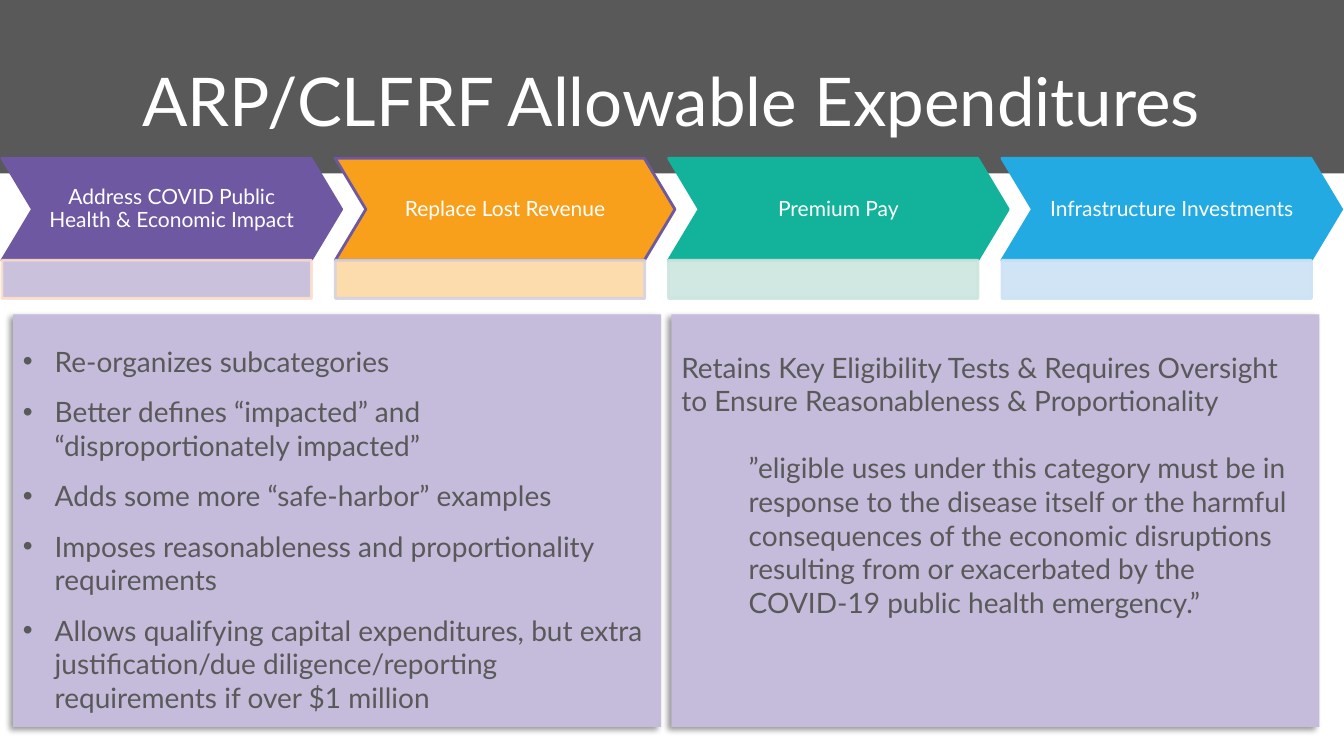
from dataclasses import dataclass

import pptx
import pptx.dml.color
import pptx.enum.shapes
import pptx.enum.text
import pptx.oxml
import pptx.oxml.ns
import pptx.util
from pptx.dml.color import RGBColor
from pptx.util import Cm, Pt

FONT = "Lato"
WHITE = RGBColor(0xFF, 0xFF, 0xFF)
GREY = RGBColor(0x59, 0x59, 0x59)
PURPLE = RGBColor(0x6E, 0x58, 0xA1)
LILAC = RGBColor(0xC5, 0xBB, 0xDA)
PEACH = RGBColor(0xFC, 0xDF, 0xCD)
ORANGE = RGBColor(0xF8, 0xA0, 0x1B)
PALE_ORANGE = RGBColor(0xFC, 0xD9, 0xA4)
PALE_PURPLE = RGBColor(0xD5, 0xD1, 0xE0)
TEAL = RGBColor(0x13, 0xB3, 0x9B)
PALE_TEAL = RGBColor(0xCC, 0xE5, 0xDE)
BLUE = RGBColor(0x23, 0xAA, 0xE2)
PALE_BLUE = RGBColor(0xCD, 0xE2, 0xF4)

RECTANGLE = pptx.enum.shapes.MSO_SHAPE.RECTANGLE
CHEVRON = pptx.enum.shapes.MSO_SHAPE.CHEVRON
MIDDLE = pptx.enum.text.MSO_ANCHOR.MIDDLE
TOP = pptx.enum.text.MSO_ANCHOR.TOP
CENTER = pptx.enum.text.PP_ALIGN.CENTER
LEFT = pptx.enum.text.PP_ALIGN.LEFT
DRAWING_NS = pptx.oxml.ns.nsdecls("a")


@dataclass
class Category:
    label: str
    fill: RGBColor
    edge: RGBColor
    bar_fill: RGBColor
    bar_edge: RGBColor


@dataclass
class PanelText:
    text: str
    indent: float = 0
    space_before: float = 0
    bullet: bool = False


@dataclass
class Panel:
    left: float
    top_inset: float
    texts: list[PanelText]


CATEGORIES = [
    Category("Address COVID Public Health & Economic Impact", PURPLE, PURPLE, LILAC, PEACH),
    Category("Replace Lost Revenue", ORANGE, PURPLE, PALE_ORANGE, PALE_PURPLE),
    Category("Premium Pay", TEAL, TEAL, PALE_TEAL, PALE_TEAL),
    Category("Infrastructure Investments", BLUE, BLUE, PALE_BLUE, PALE_BLUE),
]

CHANGES = [
    "Re-organizes subcategories",
    "Better defines “impacted” and “disproportionately impacted”",
    "Adds some more “safe-harbor” examples",
    "Imposes reasonableness and proportionality requirements",
    "Allows qualifying capital expenditures, but extra justification/due diligence/reporting "
    "requirements if over $1 million",
]

PANELS = [
    Panel(0.33, 0.76, [PanelText(change, 0.8, 12 if number else 0, True)
                       for number, change in enumerate(CHANGES)]),
    Panel(16.92, 0.9, [
        PanelText("Retains Key Eligibility Tests & Requires Oversight to Ensure "
                  "Reasonableness & Proportionality"),
        PanelText("”eligible uses under this category must be in response to the disease itself "
                  "or the harmful consequences of the economic disruptions resulting from or "
                  "exacerbated by the COVID-19 public health emergency.”", 1.7, 24),
    ]),
]


def add_block(slide, kind, left: float, top: float, width: float, height: float,
              fill: RGBColor, edge: RGBColor | None = None):
    block = slide.shapes.add_shape(kind, Cm(left), Cm(top), Cm(width), Cm(height))
    block.shadow.inherit = False
    block.fill.solid()
    block.fill.fore_color.rgb = fill
    if edge is None:
        block.line.fill.background()
    else:
        block.line.color.rgb = edge
        block.line.width = Pt(2)
    return block


def set_frame(frame, anchor, horizontal: float, vertical: float) -> None:
    frame.word_wrap = True
    frame.vertical_anchor = anchor
    frame.margin_left = frame.margin_right = Cm(horizontal)
    frame.margin_top = frame.margin_bottom = Cm(vertical)


def add_text(paragraph, text: str, size: float, color: RGBColor, align) -> None:
    paragraph.alignment = align
    run = paragraph.add_run()
    run.text = text
    run.font.name = FONT
    run.font.size = Pt(size)
    run.font.color.rgb = color


def add_category(slide, category: Category, left: float) -> None:
    arrow = add_block(slide, CHEVRON, left, 3.99, 8.56, 2.57, category.fill, category.edge)
    arrow.adjustments[0] = 0.3
    set_frame(arrow.text_frame, MIDDLE, 0.33, 0.33)
    label = arrow.text_frame.paragraphs[0]
    label.line_spacing = 0.9
    add_text(label, category.label, 15, WHITE, CENTER)

    bar = add_block(slide, RECTANGLE, left, 6.56, 7.8, 0.96, category.bar_fill, category.bar_edge)
    for color in bar._element.spPr.iter(pptx.oxml.ns.qn("a:srgbClr")):
        color.append(pptx.oxml.parse_xml(f'<a:alpha {DRAWING_NS} val="90000"/>'))


def add_panel(slide, panel: Panel) -> None:
    box = add_block(slide, RECTANGLE, panel.left, 7.92, 16.33, 10.4, LILAC)
    effects = box._element.spPr.find(pptx.oxml.ns.qn("a:effectLst"))
    effects.append(pptx.oxml.parse_xml(
        f'<a:outerShdw {DRAWING_NS} blurRad="50800" dist="38100" dir="8100000" algn="tr" '
        'rotWithShape="0"><a:srgbClr val="000000"><a:alpha val="40000"/></a:srgbClr>'
        '</a:outerShdw>'))
    frame = box.text_frame
    set_frame(frame, TOP, 0.25, 0.13)
    frame.margin_top = Cm(panel.top_inset)
    for number, item in enumerate(panel.texts):
        paragraph = frame.add_paragraph() if number else frame.paragraphs[0]
        add_text(paragraph, item.text, 20, GREY, LEFT)
        paragraph.space_before = Pt(item.space_before)
        properties = paragraph._p.get_or_add_pPr()
        properties.set("marL", str(Cm(item.indent)))
        if item.bullet:
            properties.set("indent", str(-Cm(item.indent)))
            properties.append(pptx.oxml.parse_xml(
                f'<a:buFont {DRAWING_NS} typeface="Arial"/>'))
            properties.append(pptx.oxml.parse_xml(f'<a:buChar {DRAWING_NS} char="•"/>'))


def main() -> None:
    deck = pptx.Presentation()
    deck.slide_width, deck.slide_height = Cm(33.87), Cm(19.05)
    slide = deck.slides.add_slide(deck.slide_layouts[6])

    # Header band and title
    add_block(slide, RECTANGLE, 0, 0, 33.87, 4.37, GREY)
    title = slide.shapes.add_textbox(Cm(1.78), Cm(0.94), Cm(30.28), Cm(3.15))
    set_frame(title.text_frame, MIDDLE, 0, 0.18)
    add_text(title.text_frame.paragraphs[0], "ARP/CLFRF Allowable Expenditures",
             48, WHITE, CENTER)

    # Row of spending categories
    for number, category in enumerate(CATEGORIES):
        add_category(slide, category, 0.05 + 8.4 * number)

    # Detail panels
    for panel in PANELS:
        add_panel(slide, panel)

    deck.save("out.pptx")


if __name__ == "__main__":
    main()
